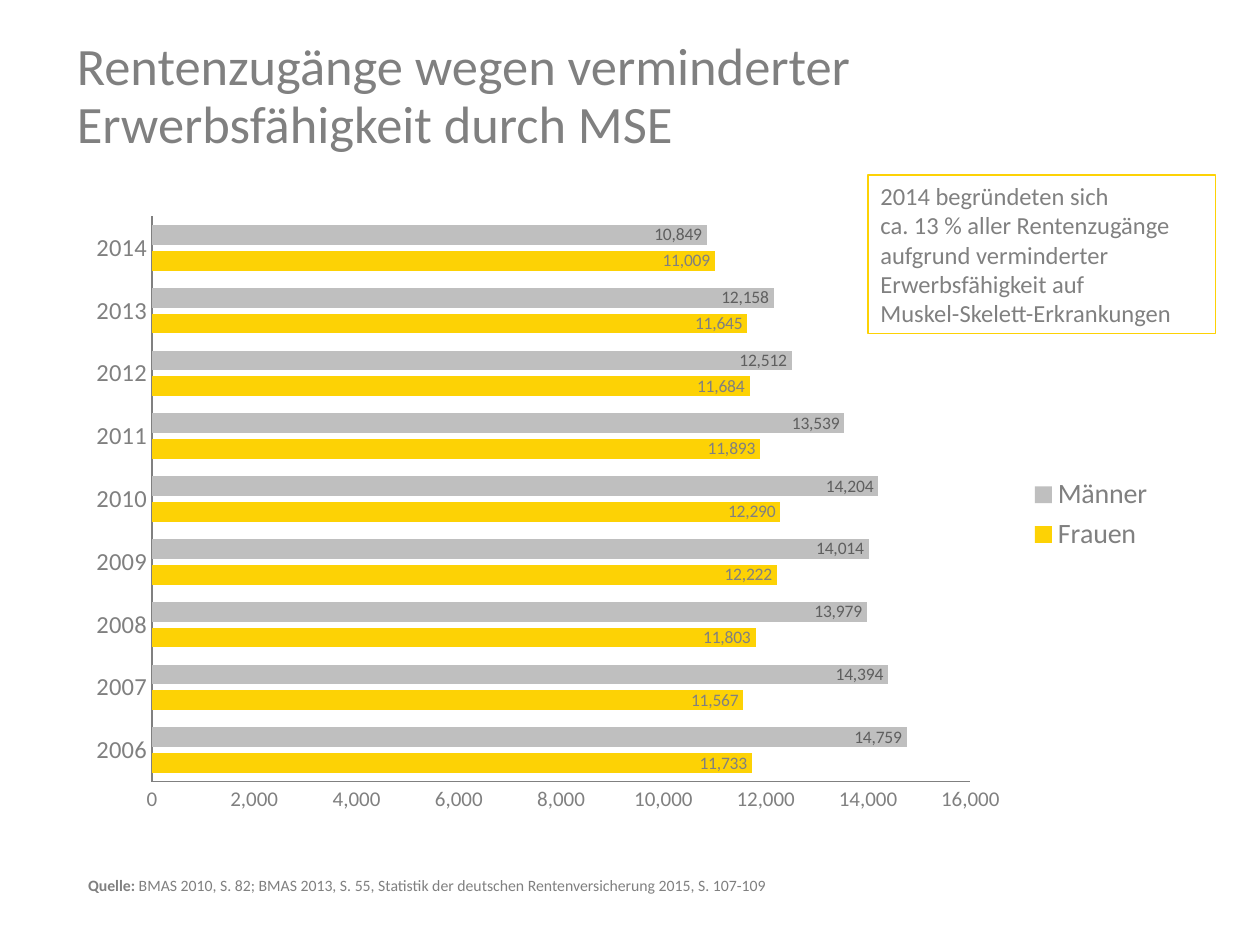
from dataclasses import dataclass
from pptx import Presentation
from pptx.chart.data import CategoryChartData as ChartData
from pptx.dml.color import RGBColor as RGB
from pptx.enum.chart import XL_CHART_TYPE as Chart, XL_LABEL_POSITION as Label
from pptx.enum.chart import XL_LEGEND_POSITION as Legend, XL_TICK_MARK as Tick
from pptx.enum.shapes import MSO_SHAPE as Shape
from pptx.enum.text import MSO_ANCHOR as Anchor, PP_ALIGN as Align
from pptx.oxml import parse_xml
from pptx.oxml.ns import nsdecls
from pptx.util import Pt


@dataclass(frozen=True)
class Theme:
    face: str = "Calibri"
    grey: str = "808080"
    dark: str = "5F5F5F"
    pale: str = "BFBFBF"
    gold: str = "FDD205"
    white: str = "FFFFFF"
    head: float = 30
    lead: float = 33
    key: float = 16
    body: float = 14
    scale: float = 12
    value: float = 10
    note: float = 9


THEME = Theme()
YEARS = [str(year) for year in range(2006, 2015)]
SERIES = [
    ("Frauen", THEME.gold, THEME.grey,
     (11733, 11567, 11803, 12222, 12290, 11893, 11684, 11645, 11009)),
    ("Männer", THEME.pale, THEME.dark,
     (14759, 14394, 13979, 14014, 14204, 13539, 12512, 12158, 10849)),
]
TITLE = "Rentenzugänge wegen verminderter Erwerbsfähigkeit durch MSE"
CLAIM = "\v".join([
    "2014 begründeten sich",
    "ca. 13 % aller Rentenzugänge",
    "aufgrund verminderter",
    "Erwerbsfähigkeit auf",
    "Muskel-Skelett-Erkrankungen",
])
SOURCE = ("BMAS 2010, S. 82; BMAS 2013, S. 55, Statistik der deutschen "
          "Rentenversicherung 2015, S. 107-109")
PLOT = {"x": 0.07, "y": 0.02, "w": 0.75, "h": 0.91}


def put(item, **form):
    for name, value in form.items():
        setattr(item, name, value)


def style(font, size, color=THEME.grey, bold=False):
    put(font, name=THEME.face, size=Pt(size), bold=bold)
    font.color.rgb = RGB.from_string(color)


def paint(fill, color):
    fill.solid()
    fill.fore_color.rgb = RGB.from_string(color)


def stroke(line, color):
    line.width = Pt(0.75)
    line.color.rgb = RGB.from_string(color)


def add_title(slide, text):
    title = slide.shapes.title
    put(title, left=Pt(36.7), top=Pt(10), width=Pt(648), height=Pt(90))
    frame = title.text_frame
    put(frame, text=text, word_wrap=True, vertical_anchor=Anchor.MIDDLE)
    para = frame.paragraphs[0]
    put(para, alignment=Align.LEFT, line_spacing=Pt(THEME.lead))
    style(para.runs[0].font, THEME.head)


def add_claim(slide, text):
    box = slide.shapes.add_shape(
        Shape.RECTANGLE, Pt(496), Pt(100), Pt(198.6), Pt(90.7))
    box.shadow.inherit = False
    box.fill.background()
    stroke(box.line, THEME.gold)
    frame = box.text_frame
    put(frame, text=text, word_wrap=True, vertical_anchor=Anchor.MIDDLE)
    para = frame.paragraphs[0]
    para.alignment = Align.LEFT
    for run in para.runs:
        style(run.font, THEME.body)


def add_note(slide, parts):
    box = slide.shapes.add_textbox(Pt(43.2), Pt(496.8), Pt(600), Pt(18))
    box.text_frame.word_wrap = True
    para = box.text_frame.paragraphs[0]
    for text, bold in parts:
        run = para.add_run()
        run.text = text
        style(run.font, THEME.note, bold=bold)


def set_axis(axis, size):
    put(axis, major_tick_mark=Tick.NONE, minor_tick_mark=Tick.NONE)
    style(axis.tick_labels.font, size)
    stroke(axis.format.line, THEME.grey)


def set_plot(chart):
    area = chart.element.find(".//{*}plotArea")
    for old in area.findall("{*}layout"):
        area.remove(old)
    modes = "".join(f'<c:{axis}Mode val="edge"/>' for axis in "xy")
    sizes = "".join(f'<c:{side} val="{part}"/>' for side, part in PLOT.items())
    area.insert(0, parse_xml(
        f'<c:layout {nsdecls("c")}><c:manualLayout>'
        f'<c:layoutTarget val="inner"/>{modes}{sizes}'
        '</c:manualLayout></c:layout>'))


def add_bars(slide):
    data = ChartData(number_format="#,##0")
    data.categories = YEARS
    for name, _, _, values in SERIES:
        data.add_series(name, values)
    chart = slide.shapes.add_chart(
        Chart.BAR_CLUSTERED, Pt(43.2), Pt(116.6), Pt(623.5), Pt(355), data).chart
    put(chart, has_title=False, has_legend=True)
    style(chart.font, THEME.key)
    put(chart.legend, position=Legend.RIGHT, include_in_layout=False)
    style(chart.legend.font, THEME.key)
    set_axis(chart.category_axis, THEME.body)
    scale = chart.value_axis
    set_axis(scale, THEME.scale)
    put(scale, minimum_scale=0, maximum_scale=16000, major_unit=2000,
        has_major_gridlines=True)
    put(scale.tick_labels, number_format="#,##0", number_format_is_linked=False)
    stroke(scale.major_gridlines.format.line, THEME.white)
    plot = chart.plots[0]
    put(plot, gap_width=88, overlap=-30, vary_by_categories=False)
    for bars, (_, color, ink, _) in zip(plot.series, SERIES):
        paint(bars.format.fill, color)
        labels = bars.data_labels
        put(labels, show_value=True, position=Label.INSIDE_END,
            number_format="#,##0", number_format_is_linked=False)
        style(labels.font, THEME.value, ink)
    set_plot(chart)


def main():
    deck = Presentation()
    put(deck, slide_width=Pt(720), slide_height=Pt(540))
    slide = deck.slides.add_slide(deck.slide_layouts.get_by_name("Title Only"))
    paint(slide.background.fill, THEME.white)
    add_title(slide, TITLE)
    add_bars(slide)
    add_claim(slide, CLAIM)
    add_note(slide, [("Quelle: ", True), (SOURCE, False)])
    deck.save("out.pptx")


if __name__ == "__main__":
    main()
